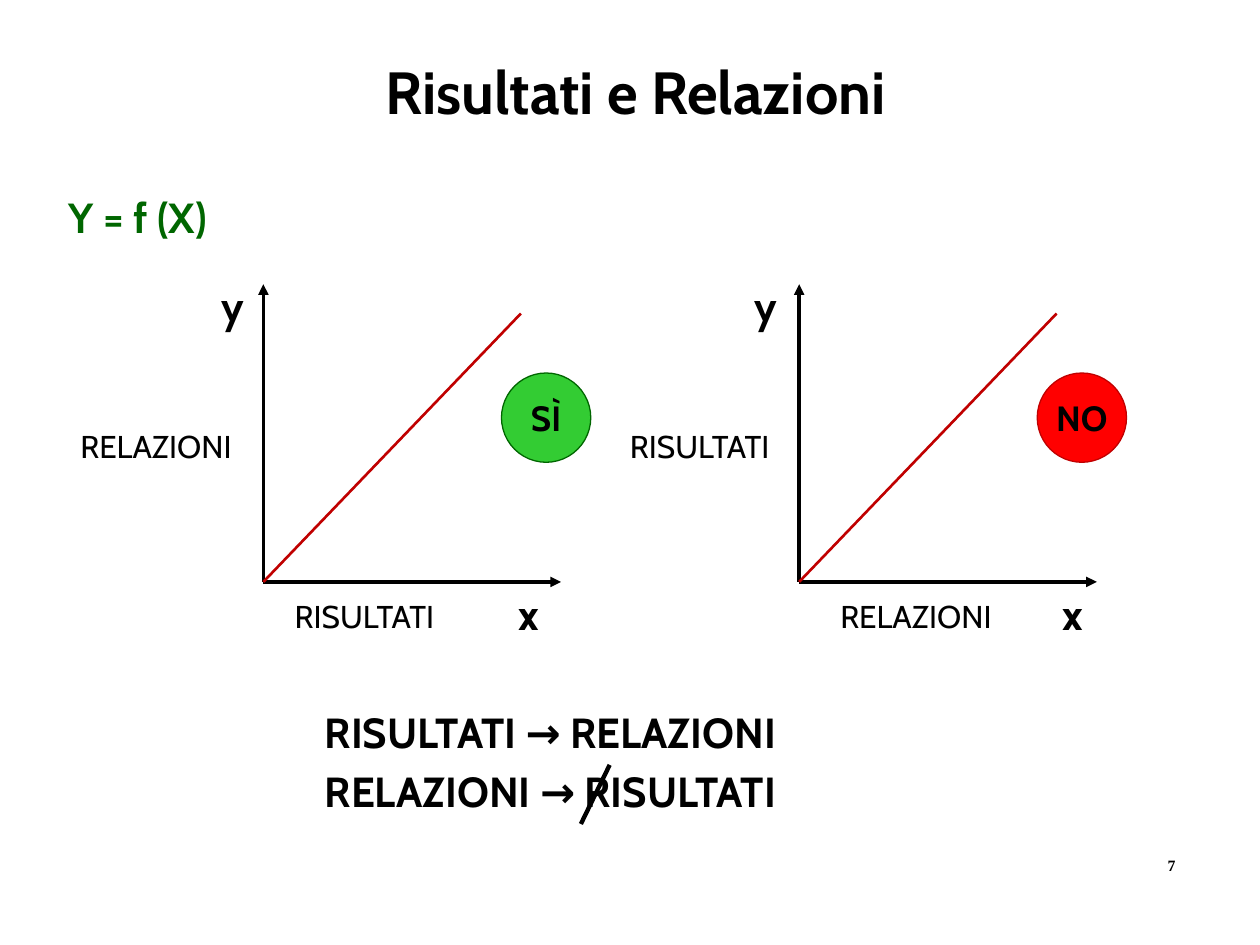
"""Build the slide comparing results and relations on two x-y plots."""
from lxml import etree
from pptx import Presentation
from pptx import util as u
from pptx.dml.color import RGBColor
from pptx.enum import shapes, text
from pptx.oxml.ns import qn

COLORS = {"ink": "000000", "formula": "006600", "curve": "C00000",
          "yes": "33CC33", "no": "FF0000"}

FORMATS = {
    "title": {"size": u.Pt(34), "bold": True, "name": "Cabin"},
    "strong": {"size": u.Pt(24), "bold": True, "name": "Cabin"},
    "label": {"size": u.Pt(18), "bold": False, "name": "Cabin"},
    "verdict": {"size": u.Pt(20), "bold": True, "name": "Cabin"},
    "number": {"size": u.Pt(9), "bold": True, "name": "Times New Roman"},
}

TEXTS = [
    (["Risultati e Relazioni"], (1.22, 0.99, 23.19, 2.08), "title", "ink"),
    (["Y = f (X)"], (1.14, 3.73, 5.16, 1.6), "strong", "formula"),
    (["RISULTATI → RELAZIONI", "RELAZIONI → RISULTATI"],
     (6.3, 14.12, 11.99, 2.79), "strong", "ink"),
    (["7"], (23.29, 17.12, 0.94, 0.64), "number", "ink"),
]

PLOTS = [
    {"left": 5.31, "x_name": ("RISULTATI", 5.69), "y_name": ("RELAZIONI", 1.37),
     "x": 10.21, "y": 4.22, "verdict": ("SÌ", "yes", "formula")},
    {"left": 16.11, "x_name": ("RELAZIONI", 16.69), "y_name": ("RISULTATI", 12.45),
     "x": 21.16, "y": 14.96, "verdict": ("NO", "no", "curve")},
]

BASE = 11.73
AXIS = 6
CURVE = (5.19, 5.41)
NAME_SIZE = (5, 1.02)
LETTER_SIZE = (1.14, 1.19)
CIRCLE = (4.8, 7.52, 1.8)
STRIKE = (11.71, 16.61, 12.29, 15.42)


def rgb(name):
    return RGBColor.from_string(COLORS[name])


def write(tf, lines, style, color, align=text.PP_ALIGN.LEFT):
    for i, line in enumerate(lines):
        p = tf.paragraphs[0] if i == 0 else tf.add_paragraph()
        p.alignment = align
        if style == "strong":
            p.space_before = u.Pt(4.8)
        r = p.add_run()
        r.text = line
        for key, value in FORMATS[style].items():
            setattr(r.font, key, value)
        r.font.color.rgb = rgb(color)


def add_text(s, lines, box, style, color="ink"):
    tf = s.shapes.add_textbox(*map(u.Cm, box)).text_frame
    tf.word_wrap = style != "number"
    centred = style == "title"
    write(tf, lines, style, color,
          text.PP_ALIGN.CENTER if centred else text.PP_ALIGN.LEFT)


def add_line(parent, ends, color, width, arrow=False):
    sp = parent.shapes.add_connector(shapes.MSO_CONNECTOR.STRAIGHT, *map(u.Cm, ends))
    sp.line.color.rgb = rgb(color)
    sp.line.width = u.Pt(width)
    if arrow:
        etree.SubElement(sp.line._get_or_add_ln(), qn("a:tailEnd"), type="triangle")
    etree.SubElement(sp._element.spPr, qn("a:effectLst"))


def add_verdict(s, left, word, fill, edge):
    dx, top, size = CIRCLE
    sp = s.shapes.add_shape(shapes.MSO_SHAPE.OVAL,
                            *map(u.Cm, (left + dx, top, size, size)))
    sp.shadow.inherit = False
    sp.fill.solid()
    sp.fill.fore_color.rgb = rgb(fill)
    sp.line.color.rgb = rgb(edge)
    sp.line.width = u.Pt(0.75)
    tf = sp.text_frame
    frame = {"margin_left": 0, "margin_right": 0, "margin_top": 0, "margin_bottom": 0,
             "word_wrap": False, "vertical_anchor": text.MSO_ANCHOR.MIDDLE}
    for key, value in frame.items():
        setattr(tf, key, value)
    write(tf, [word], "verdict", "ink", text.PP_ALIGN.CENTER)


def add_plot(s, plot):
    left = plot["left"]
    axes = s.shapes.add_group_shape()
    for dx, dy in ((0, AXIS), (AXIS, 0)):
        add_line(axes, (left, BASE, left + dx, BASE - dy), "ink", 2, arrow=True)
    add_line(s, (left, BASE, left + CURVE[0], BASE - CURVE[1]), "curve", 1.5)
    for key, top in (("x_name", 11.91), ("y_name", 8.48)):
        name, x = plot[key]
        add_text(s, [name], (x, top, *NAME_SIZE), "label")
    for letter, top in (("x", BASE), ("y", 5.54)):
        add_text(s, [letter], (plot[letter], top, *LETTER_SIZE), "strong")
    add_verdict(s, left, *plot["verdict"])


def main():
    prs = Presentation()
    prs.slide_width, prs.slide_height = u.Cm(25.4), u.Cm(19.05)
    s = prs.slides.add_slide(prs.slide_layouts[6])
    for item in TEXTS:
        add_text(s, *item)
    for plot in PLOTS:
        add_plot(s, plot)
    add_line(s, STRIKE, "ink", 2.5)
    prs.save("out.pptx")


if __name__ == "__main__":
    main()
